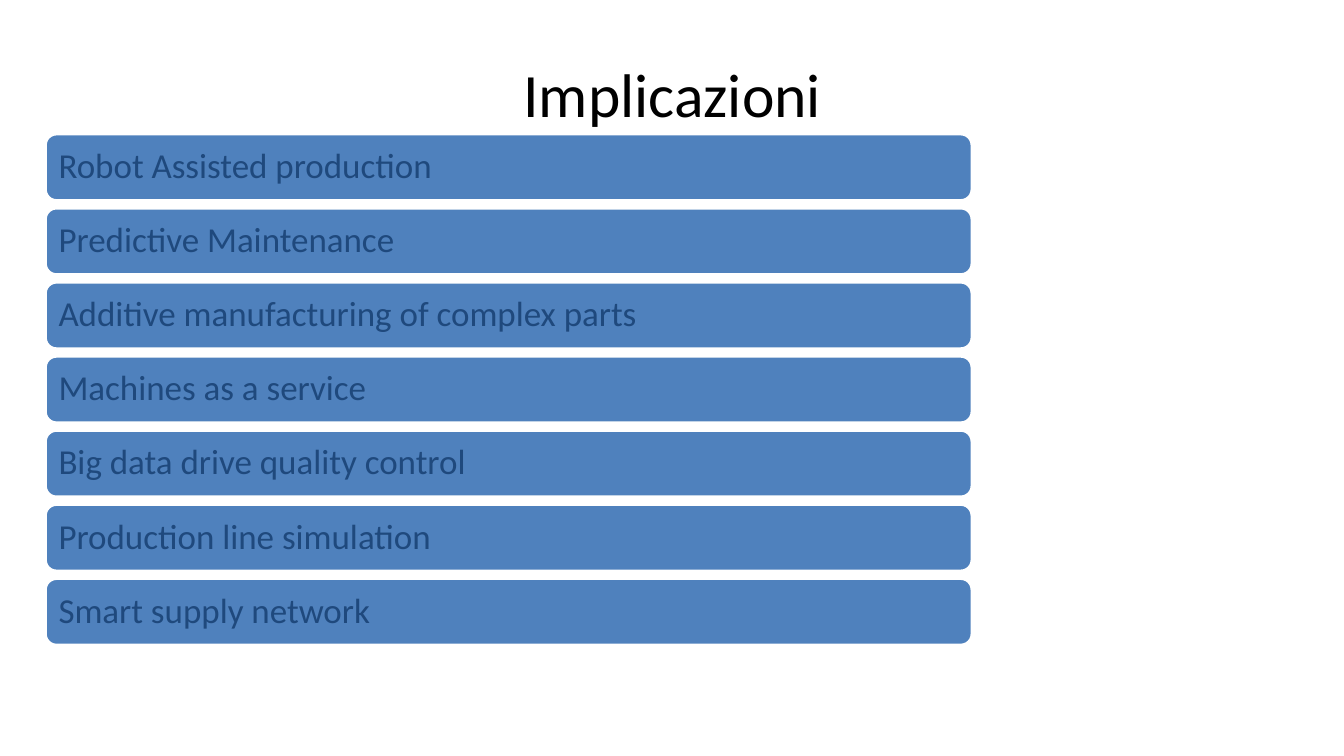
from dataclasses import dataclass
from typing import NamedTuple

from pptx import Presentation
from pptx.dml.color import RGBColor
from pptx.enum.shapes import MSO_SHAPE as Preset
from pptx.enum.text import MSO_ANCHOR as Anchor, PP_ALIGN as Align
from pptx.shapes.autoshape import Shape
from pptx.util import Inches, Pt


@dataclass(frozen=True)
class Theme:
    font: str = "Calibri"
    title_size: float = 44
    bar_size: float = 25
    outline_width: float = 2
    title_color: str = "000000"
    bar_fill: str = "4F81BD"
    bar_outline: str = "FFFFFF"
    bar_text: str = "1F497D"


class Box(NamedTuple):
    left: float
    top: float
    width: float
    height: float

    def emu(self) -> list[int]:
        return [Inches(length) for length in self]


@dataclass(frozen=True)
class BarColumn:
    """Rows of equal height, evenly spaced from first_top to last_top."""
    left: float
    width: float
    height: float
    first_top: float
    last_top: float
    rows: int

    def row(self, index: int) -> Box:
        pitch = (self.last_top - self.first_top) / (self.rows - 1)
        return Box(self.left, self.first_top + index * pitch, self.width, self.height)


THEME = Theme()
SLIDE_WIDTH, SLIDE_HEIGHT = 13.33, 7.5
TITLE_BOX = Box(0.67, 0.3, 12, 1.25)
IMPLICATIONS = (
    "Robot Assisted production",
    "Predictive Maintenance",
    "Additive manufacturing of complex parts",
    "Machines as a service",
    "Big data drive quality control",
    "Production line simulation",
    "Smart supply network",
)
BARS = BarColumn(0.45, 9.19, 0.66, 1.33, 5.74, len(IMPLICATIONS))
FRAME_FORMAT = {
    "word_wrap": True,
    "vertical_anchor": Anchor.MIDDLE,
    "margin_left": Inches(0.1),
    "margin_right": Inches(0.1),
    "margin_top": Inches(0.1),
    "margin_bottom": Inches(0.1),
}


def set_attributes(target: object, values: dict) -> None:
    for name, value in values.items():
        setattr(target, name, value)


def write_text(shape: Shape, text: str, size: float, color: str, paragraph_format: dict) -> None:
    set_attributes(shape.text_frame, FRAME_FORMAT)
    paragraph = shape.text_frame.paragraphs[0]
    set_attributes(paragraph, paragraph_format)
    run = paragraph.add_run()
    run.text = text
    set_attributes(run.font, {"name": THEME.font, "size": Pt(size)})
    run.font.color.rgb = RGBColor.from_string(color)


def add_title(shapes, text: str) -> None:
    title = shapes.add_textbox(*TITLE_BOX.emu())
    write_text(title, text, THEME.title_size, THEME.title_color, {"alignment": Align.CENTER})


def add_bar(shapes, box: Box, text: str) -> None:
    bar = shapes.add_shape(Preset.ROUNDED_RECTANGLE, *box.emu())
    bar.shadow.inherit = False
    bar.fill.solid()
    bar.fill.fore_color.rgb = RGBColor.from_string(THEME.bar_fill)
    bar.line.color.rgb = RGBColor.from_string(THEME.bar_outline)
    bar.line.width = Pt(THEME.outline_width)
    write_text(bar, text, THEME.bar_size, THEME.bar_text,
               {"alignment": Align.LEFT, "line_spacing": 0.9})


def main() -> None:
    presentation = Presentation()
    set_attributes(presentation, {"slide_width": Inches(SLIDE_WIDTH),
                                  "slide_height": Inches(SLIDE_HEIGHT)})
    slide = presentation.slides.add_slide(presentation.slide_layouts[6])
    add_title(slide.shapes, "Implicazioni")
    bar_group = slide.shapes.add_group_shape()
    for index, implication in enumerate(IMPLICATIONS):
        add_bar(bar_group.shapes, BARS.row(index), implication)
    presentation.save("out.pptx")


if __name__ == "__main__":
    main()
